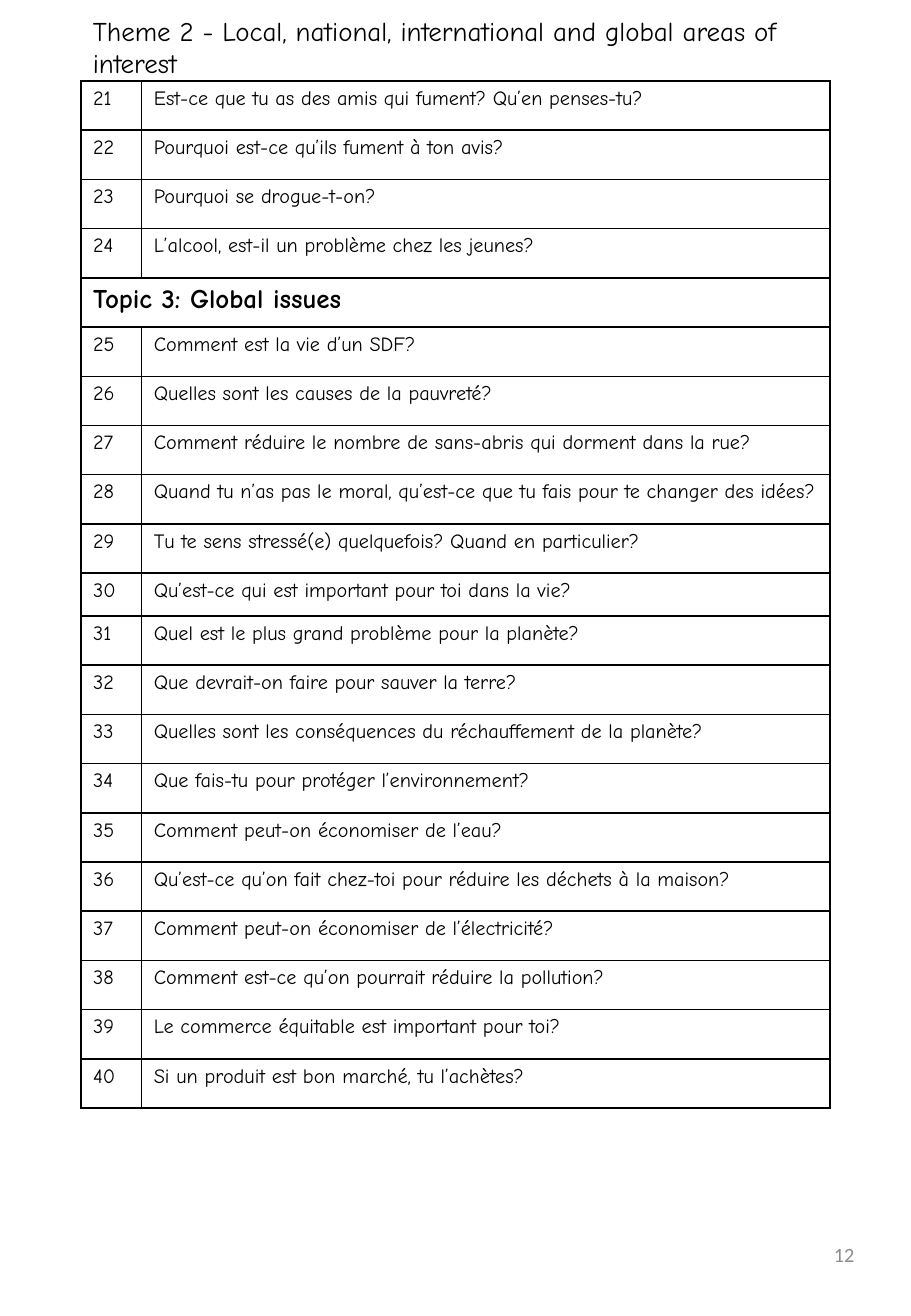
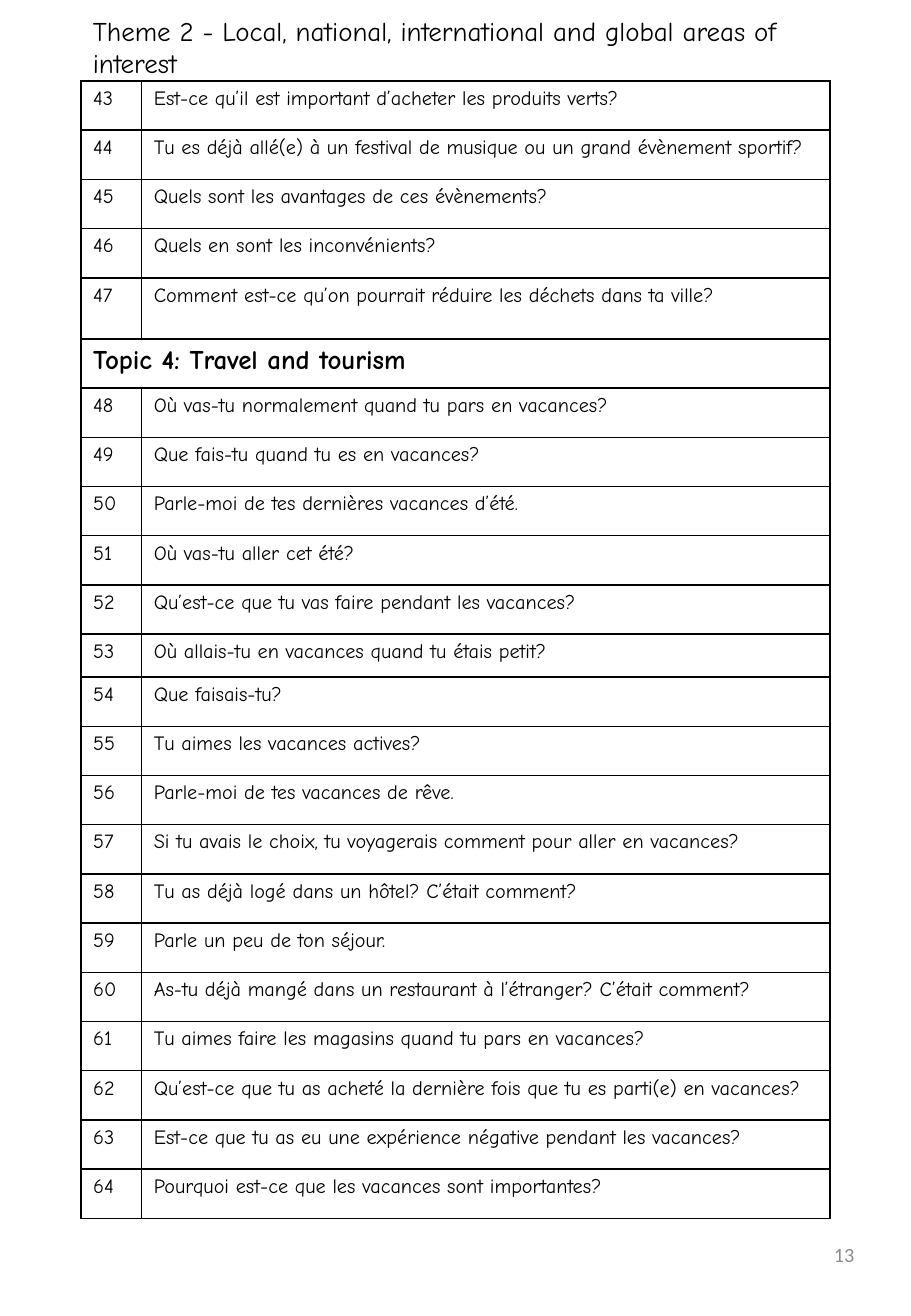
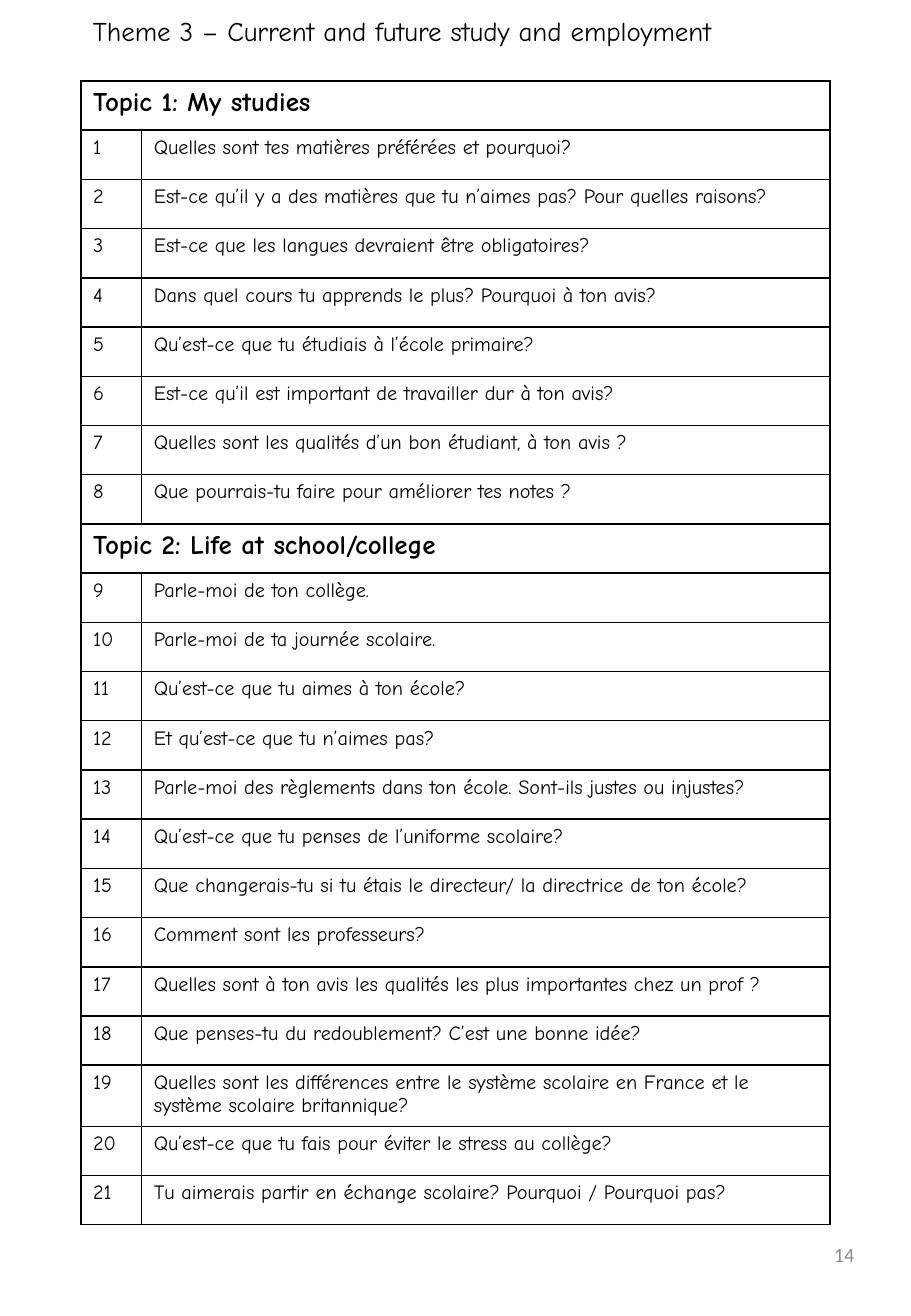
"""Build three pages of French speaking questions, each a titled and numbered table."""

from dataclasses import dataclass, field

from lxml.etree import SubElement
from pptx import Presentation
from pptx.dml.color import RGBColor
from pptx.enum.text import MSO_ANCHOR, MSO_AUTO_SIZE, PP_ALIGN
from pptx.oxml.ns import qn
from pptx.util import Pt


@dataclass(frozen=True)
class Theme:
    """Colours, fonts, type sizes and shared measures in points."""

    ink: str = "000000"
    muted: str = "8C8C8C"
    text_font: str = "Comic Neue"
    number_font: str = "Calibri"
    heading_size: float = 16
    body_size: float = 12
    border_width: float = 1
    left: float = 48
    table_top: float = 48
    column_widths: tuple = (36, 408)
    row_height: float = 29.18
    short_row: float = 25.4
    tall_row: float = 36.2


THEME = Theme()


@dataclass
class Page:
    """A title and its sections of (topic, questions), numbered from first_question."""

    title: str
    title_height: float
    first_question: int
    sections: list
    row_heights: dict = field(default_factory=dict)


LOCAL_THEME = "Theme 2 - Local, national, international and global areas of interest"

PAGES = [
    Page(
        LOCAL_THEME,
        46,
        21,
        [
            (None, [
                "Est-ce que tu as des amis qui fument? Qu’en penses-tu?",
                "Pourquoi est-ce qu’ils fument à ton avis?",
                "Pourquoi se drogue-t-on?",
                "L’alcool, est-il un problème chez les jeunes?",
            ]),
            ("Topic 3: Global issues", [
                "Comment est la vie d’un SDF?",
                "Quelles sont les causes de la pauvreté?",
                "Comment réduire le nombre de sans-abris qui dorment dans la rue?",
                "Quand tu n’as pas le moral, qu’est-ce que tu fais pour te changer des idées?",
                "Tu te sens stressé(e) quelquefois? Quand en particulier?",
                "Qu’est-ce qui est important pour toi dans la vie?",
                "Quel est le plus grand problème pour la planète?",
                "Que devrait-on faire pour sauver la terre?",
                "Quelles sont les conséquences du réchauffement de la planète?",
                "Que fais-tu pour protéger l’environnement?",
                "Comment peut-on économiser de l’eau?",
                "Qu’est-ce qu’on fait chez-toi pour réduire les déchets à la maison?",
                "Comment peut-on économiser de l’électricité?",
                "Comment est-ce qu’on pourrait réduire la pollution?",
                "Le commerce équitable est important pour toi?",
                "Si un produit est bon marché, tu l’achètes?",
            ]),
        ],
        {30: THEME.short_row},
    ),
    Page(
        LOCAL_THEME,
        46,
        43,
        [
            (None, [
                "Est-ce qu’il est important d’acheter les produits verts?",
                "Tu es déjà allé(e) à un festival de musique ou un grand évènement sportif?",
                "Quels sont les avantages de ces évènements?",
                "Quels en sont les inconvénients?",
                "Comment est-ce qu’on pourrait réduire les déchets dans ta ville?",
            ]),
            ("Topic 4: Travel and tourism", [
                "Où vas-tu normalement quand tu pars en vacances?",
                "Que fais-tu quand tu es en vacances?",
                "Parle-moi de tes dernières vacances d’été.",
                "Où vas-tu aller cet été?",
                "Qu’est-ce que tu vas faire pendant les vacances?",
                "Où allais-tu en vacances quand tu étais petit?",
                "Que faisais-tu?",
                "Tu aimes les vacances actives?",
                "Parle-moi de tes vacances de rêve.",
                "Si tu avais le choix, tu voyagerais comment pour aller en vacances?",
                "Tu as déjà logé dans un hôtel? C’était comment?",
                "Parle un peu de ton séjour.",
                "As-tu déjà mangé dans un restaurant à l’étranger? C’était comment?",
                "Tu aimes faire les magasins quand tu pars en vacances?",
                "Qu’est-ce que tu as acheté la dernière fois que tu es parti(e) en vacances?",
                "Est-ce que tu as eu une expérience négative pendant les vacances?",
                "Pourquoi est-ce que les vacances sont importantes?",
            ]),
        ],
        {47: THEME.tall_row, 53: THEME.short_row},
    ),
    Page(
        "Theme 3 – Current and future study and employment",
        26.6,
        1,
        [
            ("Topic 1: My studies", [
                "Quelles sont tes matières préférées et pourquoi?",
                "Est-ce qu’il y a des matières que tu n’aimes pas? Pour quelles raisons?",
                "Est-ce que les langues devraient être obligatoires?",
                "Dans quel cours tu apprends le plus? Pourquoi à ton avis?",
                "Qu’est-ce que tu étudiais à l’école primaire?",
                "Est-ce qu’il est important de travailler dur à ton avis?",
                "Quelles sont les qualités d’un bon étudiant, à ton avis ?",
                "Que pourrais-tu faire pour améliorer tes notes ?",
            ]),
            ("Topic 2: Life at school/college", [
                "Parle-moi de ton collège.",
                "Parle-moi de ta journée scolaire.",
                "Qu’est-ce que tu aimes à ton école?",
                "Et qu’est-ce que tu n’aimes pas?",
                "Parle-moi des règlements dans ton école. Sont-ils justes ou injustes?",
                "Qu’est-ce que tu penses de l’uniforme scolaire?",
                "Que changerais-tu si tu étais le directeur/ la directrice de ton école?",
                "Comment sont les professeurs?",
                "Quelles sont à ton avis les qualités les plus importantes chez un prof ?",
                "Que penses-tu du redoublement? C’est une bonne idée?",
                "Quelles sont les différences entre le système scolaire en France"
                " et le système scolaire britannique?",
                "Qu’est-ce que tu fais pour éviter le stress au collège?",
                "Tu aimerais partir en échange scolaire? Pourquoi / Pourquoi pas?",
            ]),
        ],
        {19: THEME.tall_row},
    ),
]


def write_text(text_frame, text, size, font=THEME.text_font, color=THEME.ink, bold=False):
    """Set the text of a frame and format its run."""
    text_frame.text = text
    for run in text_frame.paragraphs[0].runs:
        run.font.name = font
        run.font.size = Pt(size)
        run.font.bold = bold
        run.font.color.rgb = RGBColor.from_string(color)


def add_text_box(slide, left, top, width, height):
    """Add a wrapping text box and return its text frame."""
    box = slide.shapes.add_textbox(Pt(left), Pt(top), Pt(width), Pt(height))
    box.text_frame.word_wrap = True
    return box.text_frame


def add_title(slide, page):
    """Add the theme title above the table."""
    text_frame = add_text_box(slide, THEME.left, 5, 438, page.title_height)
    text_frame.auto_size = MSO_AUTO_SIZE.SHAPE_TO_FIT_TEXT
    write_text(text_frame, page.title, THEME.heading_size)


def add_page_number(slide, number):
    """Add the grey page number at the bottom right."""
    text_frame = add_text_box(slide, 387.5, 723, 126, 41.5)
    text_frame.vertical_anchor = MSO_ANCHOR.MIDDLE
    write_text(text_frame, str(number), THEME.body_size, THEME.number_font, THEME.muted)
    text_frame.paragraphs[0].alignment = PP_ALIGN.RIGHT


def style_cell(cell):
    """Give a cell thin borders on every side and no fill."""
    properties = cell._tc.get_or_add_tcPr()
    for side in ("a:lnL", "a:lnR", "a:lnT", "a:lnB"):
        line = SubElement(properties, qn(side), w=str(Pt(THEME.border_width)))
        fill = SubElement(line, qn("a:solidFill"))
        SubElement(fill, qn("a:srgbClr"), val=THEME.ink)
    cell.fill.background()


def list_rows(page):
    """Return the rows of a page as (question number or None, text, height)."""
    rows = []
    number = page.first_question
    for topic, questions in page.sections:
        if topic:
            rows.append((None, topic, THEME.row_height))
        for question in questions:
            rows.append((number, question, page.row_heights.get(number, THEME.row_height)))
            number += 1
    return rows


def add_question_table(slide, page):
    """Add the table of numbered questions with merged topic rows."""
    rows = list_rows(page)
    widths = THEME.column_widths
    total_height = sum(height for _, _, height in rows)
    table = slide.shapes.add_table(
        len(rows), len(widths),
        Pt(THEME.left), Pt(THEME.table_top), Pt(sum(widths)), Pt(total_height),
    ).table
    table.first_row = False
    table.horz_banding = False
    for column, width in zip(table.columns, widths):
        column.width = Pt(width)
    for cell in table.iter_cells():
        style_cell(cell)
    for index, (number, text, height) in enumerate(rows):
        table.rows[index].height = Pt(height)
        first, second = table.cell(index, 0), table.cell(index, 1)
        if number is None:
            first.merge(second)
            write_text(first.text_frame, text, THEME.heading_size, bold=True)
        else:
            write_text(first.text_frame, str(number), THEME.body_size)
            write_text(second.text_frame, text, THEME.body_size)


def main():
    """Build the pages and save the presentation."""
    presentation = Presentation()
    presentation.slide_width = Pt(540)
    presentation.slide_height = Pt(780)
    for page_number, page in enumerate(PAGES, start=12):
        slide = presentation.slides.add_slide(presentation.slide_layouts[6])
        add_page_number(slide, page_number)
        add_question_table(slide, page)
        add_title(slide, page)
    presentation.save("out.pptx")


if __name__ == "__main__":
    main()
